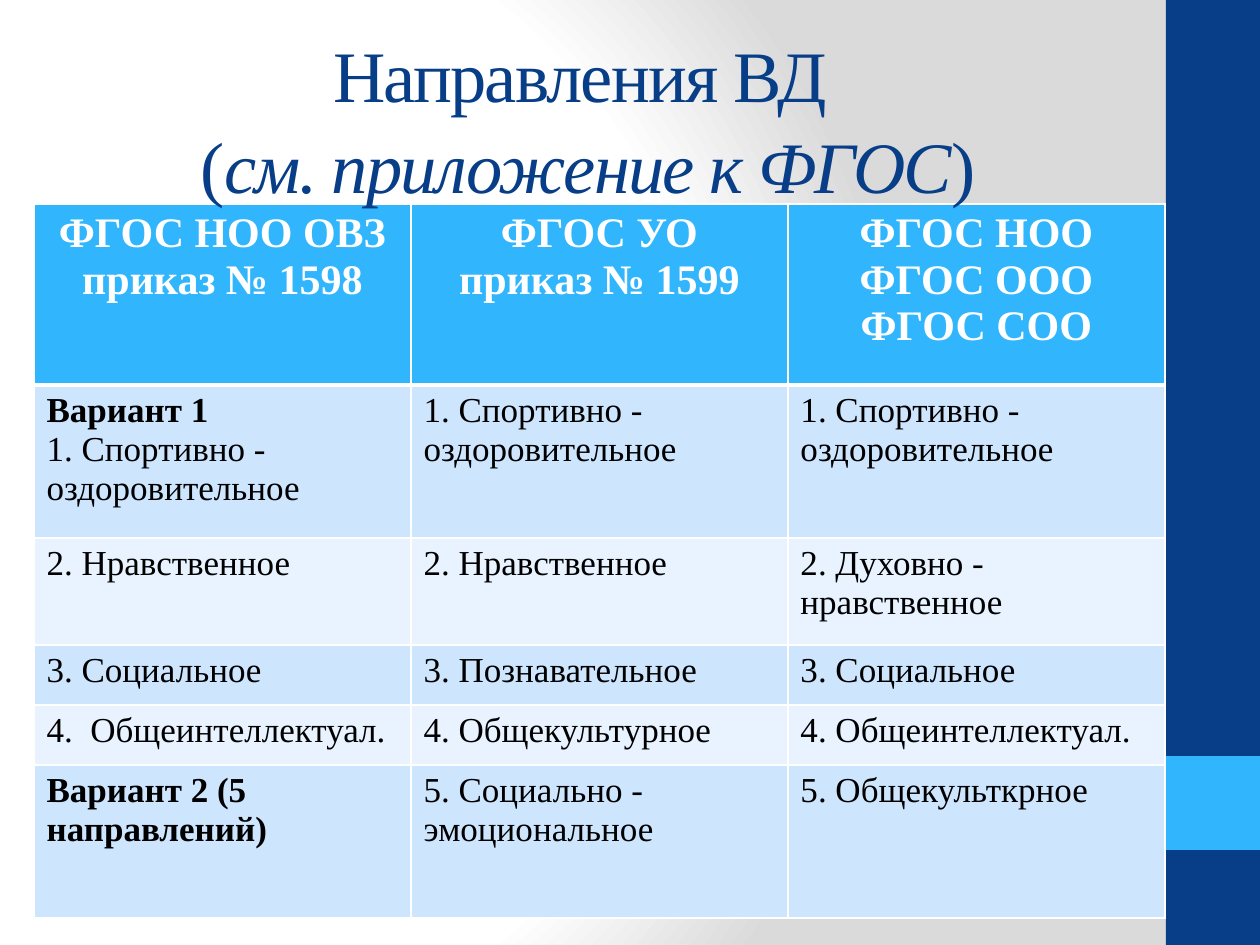
"""Build the slide on directions of extracurricular work as a titled table."""
from lxml import etree
from pptx import Presentation
from pptx import util as u
from pptx.dml.color import RGBColor
from pptx.enum import shapes, text
from pptx.oxml import parse_xml
from pptx.oxml.ns import nsdecls, qn

NAVY = RGBColor(0x07, 0x3E, 0x87)
SKY = RGBColor(0x31, 0xB6, 0xFD)
PALE = RGBColor(0xCE, 0xE5, 0xFE)
MIST = RGBColor(0xE8, 0xF3, 0xFF)
WHITE = RGBColor(0xFF, 0xFF, 0xFF)
GREY = RGBColor(0xDA, 0xDA, 0xDA)
BLACK = RGBColor(0, 0, 0)
FONT = "Times New Roman"

TITLE = [("Направления ВД ", False), ("\n", False), ("(", False),
         ("см. приложение к ФГОС", True), (")", False)]
HEAD = ["ФГОС НОО ОВЗ приказ № 1598", "ФГОС УО\nприказ № 1599",
        "ФГОС НОО\nФГОС ООО\nФГОС СОО"]
BODY = [
    ["Вариант 1\n1. Спортивно - оздоровительное",
     "1. Спортивно - оздоровительное", "1. Спортивно - оздоровительное"],
    ["2. Нравственное", "2. Нравственное", "2. Духовно - нравственное"],
    ["3. Социальное", "3. Познавательное", "3. Социальное"],
    ["4.  Общеинтеллектуал.", "4. Общекультурное", "4. Общеинтеллектуал."],
    ["Вариант 2 (5 направлений)", "5. Социально - эмоциональное",
     "5. Общекульткрное"],
]
BARS = [((1166, 0, 94, 945), NAVY), ((1166, 756, 94, 94), SKY)]
SPOT = (34, 204)
COL = 377
ROWS = [181, 153, 107, 60, 60, 153]
STOPS = [(0, WHITE), (75, WHITE), (100, GREY)]


def px(*nums):
    return [u.Emu(round(n * 914400 / 126)) for n in nums]


def add_run(para, words, size, color, bold=False, slant=False):
    run = para.add_run()
    run.text = words
    font = run.font
    font.name, font.size, font.bold, font.italic = FONT, u.Pt(size), bold, slant
    font.color.rgb = color
    return run


def paint(slide):
    stops = "".join(f'<a:gs pos="{at * 1000}"><a:srgbClr val="{hue}"/></a:gs>'
                    for at, hue in STOPS)
    back = parse_xml(
        f'<p:bg {nsdecls("p", "a")}><p:bgPr><a:gradFill rotWithShape="1">'
        f'<a:gsLst>{stops}</a:gsLst><a:path path="circle">'
        '<a:fillToRect l="20000" t="50000" r="100000" b="50000"/></a:path>'
        '</a:gradFill><a:effectLst/></p:bgPr></p:bg>')
    slide.element.cSld.insert(0, back)


def add_bar(slide, box, color):
    bar = slide.shapes.add_shape(shapes.MSO_SHAPE.RECTANGLE, *px(*box))
    bar.shadow.inherit = False
    bar.fill.solid()
    bar.fill.fore_color.rgb = color
    bar.line.fill.background()


def edge(cell, base):
    props = cell._tc.get_or_add_tcPr()
    for i, side in enumerate("LRTB"):
        width = base if side == "B" else 1
        line = etree.Element(qn("a:ln" + side), w=str(u.Pt(width)))
        fill = etree.SubElement(line, qn("a:solidFill"))
        etree.SubElement(fill, qn("a:srgbClr"), val=str(WHITE))
        props.insert(i, line)


def fill_cell(cell, words, head, color):
    cell.fill.solid()
    cell.fill.fore_color.rgb = color
    edge(cell, 3 if head else 1)
    for i, line in enumerate(words.split("\n")):
        frame = cell.text_frame
        para = frame.add_paragraph() if i else frame.paragraphs[0]
        if head:
            para.alignment = text.PP_ALIGN.CENTER
            add_run(para, line, 24, WHITE, True)
        else:
            add_run(para, line, 20, BLACK, line.startswith("Вариант"))


def add_grid(slide):
    box = px(*SPOT, COL * len(HEAD), sum(ROWS))
    grid = slide.shapes.add_table(len(ROWS), len(HEAD), *box).table
    for col in grid.columns:
        col.width = px(COL)[0]
    for r, words in enumerate([HEAD] + BODY):
        grid.rows[r].height = px(ROWS[r])[0]
        color = SKY if r == 0 else PALE if r % 2 else MIST
        for c, item in enumerate(words):
            fill_cell(grid.cell(r, c), item, r == 0, color)


def add_title(slide):
    frame = slide.shapes.add_textbox(*px(63, 38, 1050, 157)).text_frame
    frame.word_wrap = True
    frame.vertical_anchor = text.MSO_ANCHOR.MIDDLE
    para = frame.paragraphs[0]
    para.alignment = text.PP_ALIGN.CENTER
    para.line_spacing = 1.05
    for words, slant in TITLE:
        if words == "\n":
            para.add_line_break()
            continue
        run = add_run(para, words, 41.4, NAVY, slant=slant)
        run.font._element.set("spc", "-100")


def main():
    deck = Presentation()
    deck.slide_width, deck.slide_height = px(1260, 945)
    slide = deck.slides.add_slide(deck.slide_layouts[6])
    paint(slide)
    for box, color in BARS:
        add_bar(slide, box, color)
    add_grid(slide)
    add_title(slide)
    deck.save("out.pptx")


if __name__ == "__main__":
    main()
